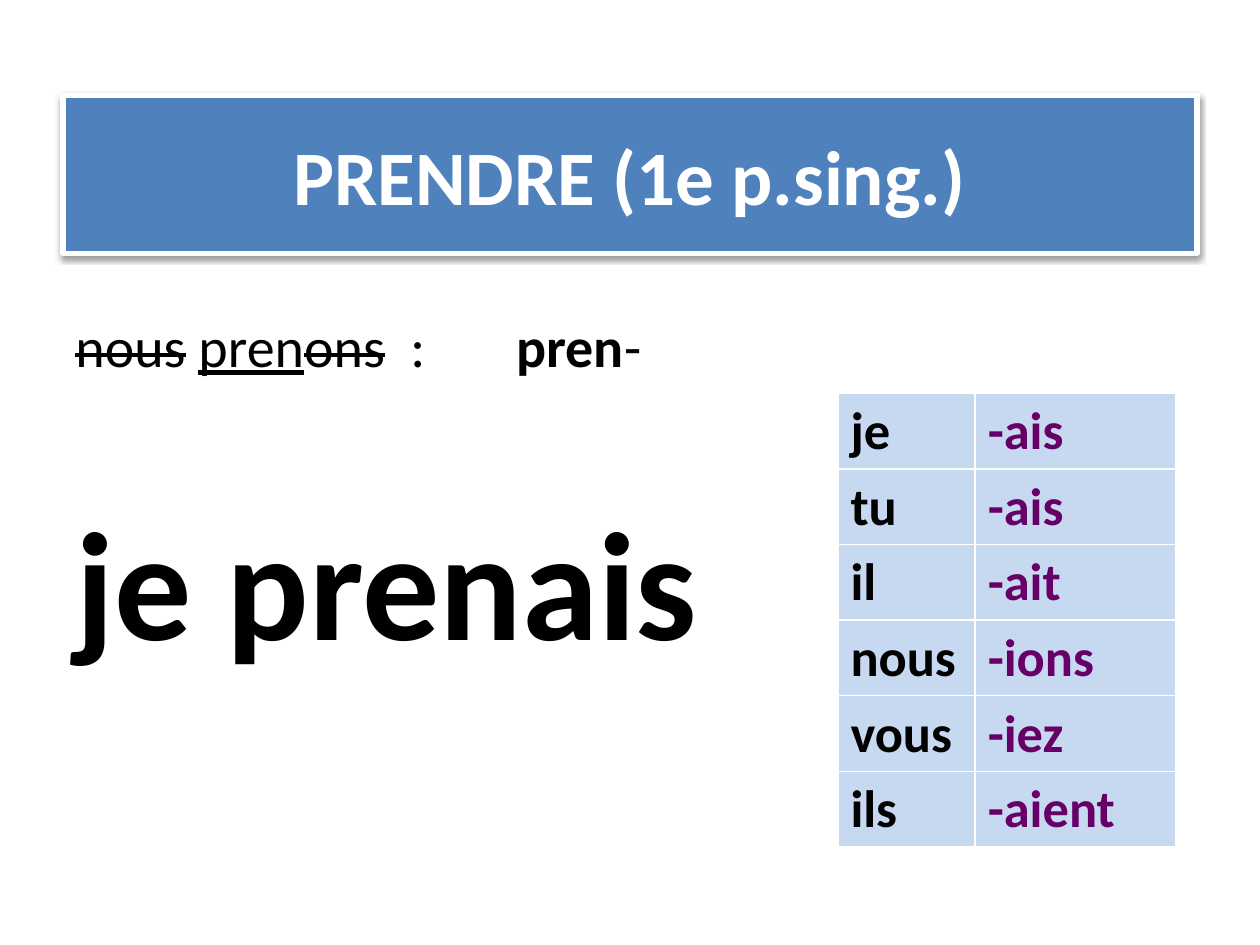
from lxml import etree
from pptx import Presentation
from pptx import util as u
from pptx.dml.color import RGBColor
from pptx.enum import shapes, text
from pptx.oxml import ns

COLORS = {
    "banner": "4F81BD",
    "white": "FFFFFF",
    "ink": "000000",
    "ending": "660066",
    "cell": "C6D9F1",
}
ENDINGS = [
    ("je", "-ais"),
    ("tu", "-ais"),
    ("il", "-ait"),
    ("nous", "-ions"),
    ("vous", "-iez"),
    ("ils", "-aient"),
]
STEM = [
    ("nous", "strike"),
    (" ", ""),
    ("pren", "underline"),
    ("ons", "strike"),
    ("  :\t\t", ""),
    ("pren", "bold"),
    ("-", ""),
]


class Lesson:
    font = "Calibri"

    def __init__(self, page):
        self.page = page

    def color(self, name):
        return RGBColor.from_string(COLORS[name])

    def style(self, para, size, color="ink", bold=None):
        font = para.font
        font.name = self.font
        font.size = u.Pt(size)
        font.bold = bold
        font.color.rgb = self.color(color)

    def add_shadow(self, box):
        box.shadow.inherit = False
        effects = box._element.spPr.find(ns.qn("a:effectLst"))
        shadow = etree.SubElement(
            effects, ns.qn("a:outerShdw"),
            blurRad="40000", dist="20000", dir="5400000", rotWithShape="0",
        )
        tint = etree.SubElement(shadow, ns.qn("a:srgbClr"), val=COLORS["ink"])
        etree.SubElement(tint, ns.qn("a:alpha"), val="38000")

    def add_banner(self, title, left, top, width, height):
        box = self.page.shapes.add_shape(
            shapes.MSO_SHAPE.RECTANGLE,
            u.Inches(left), u.Inches(top), u.Inches(width), u.Inches(height),
        )
        box.fill.solid()
        box.fill.fore_color.rgb = self.color("banner")
        box.line.color.rgb = self.color("white")
        box.line.width = u.Pt(3)
        self.add_shadow(box)
        frame = box.text_frame
        frame.vertical_anchor = text.MSO_ANCHOR.MIDDLE
        para = frame.paragraphs[0]
        para.text = title
        para.alignment = text.PP_ALIGN.CENTER
        self.style(para, 44, "white", True)

    def add_body(self, stem, answer, left, top, width, height):
        box = self.page.shapes.add_textbox(
            u.Inches(left), u.Inches(top), u.Inches(width), u.Inches(height)
        )
        frame = box.text_frame
        frame.word_wrap = True
        para = frame.paragraphs[0]
        self.style(para, 32)
        for words, mark in stem:
            span = para.add_run()
            span.text = words
            if mark == "strike":
                span.font._element.set("strike", "sngStrike")
            elif mark == "underline":
                span.font.underline = True
            elif mark == "bold":
                span.font.bold = True
        para = frame.add_paragraph()
        para.text = answer
        para.space_before = u.Pt(62)
        self.style(para, 88, bold=True)

    def add_endings(self, rows, left, top, widths, row_height):
        table = self.page.shapes.add_table(
            len(rows), len(widths), u.Inches(left), u.Inches(top),
            u.Inches(sum(widths)), u.Inches(row_height * len(rows)),
        ).table
        for column, width in zip(table.columns, widths):
            column.width = u.Inches(width)
        for r, row in enumerate(rows):
            for c, (words, color) in enumerate(zip(row, ("ink", "ending"))):
                cell = table.cell(r, c)
                cell.fill.solid()
                cell.fill.fore_color.rgb = self.color("cell")
                para = cell.text_frame.paragraphs[0]
                para.text = words
                self.style(para, 30, color, True)


def main():
    deck = Presentation()
    deck.slide_width = u.Inches(10)
    deck.slide_height = u.Inches(7.5)
    lesson = Lesson(deck.slides.add_slide(deck.slide_layouts[6]))
    lesson.add_banner("PRENDRE (1e p.sing.)", 0.5, 0.76, 9, 1.25)
    lesson.add_body(STEM, "je prenais", 0.5, 2.42, 9, 4.28)
    lesson.add_endings(ENDINGS, 6.65, 3.12, (1.09, 1.59), 0.6)
    deck.save("out.pptx")


if __name__ == "__main__":
    main()
